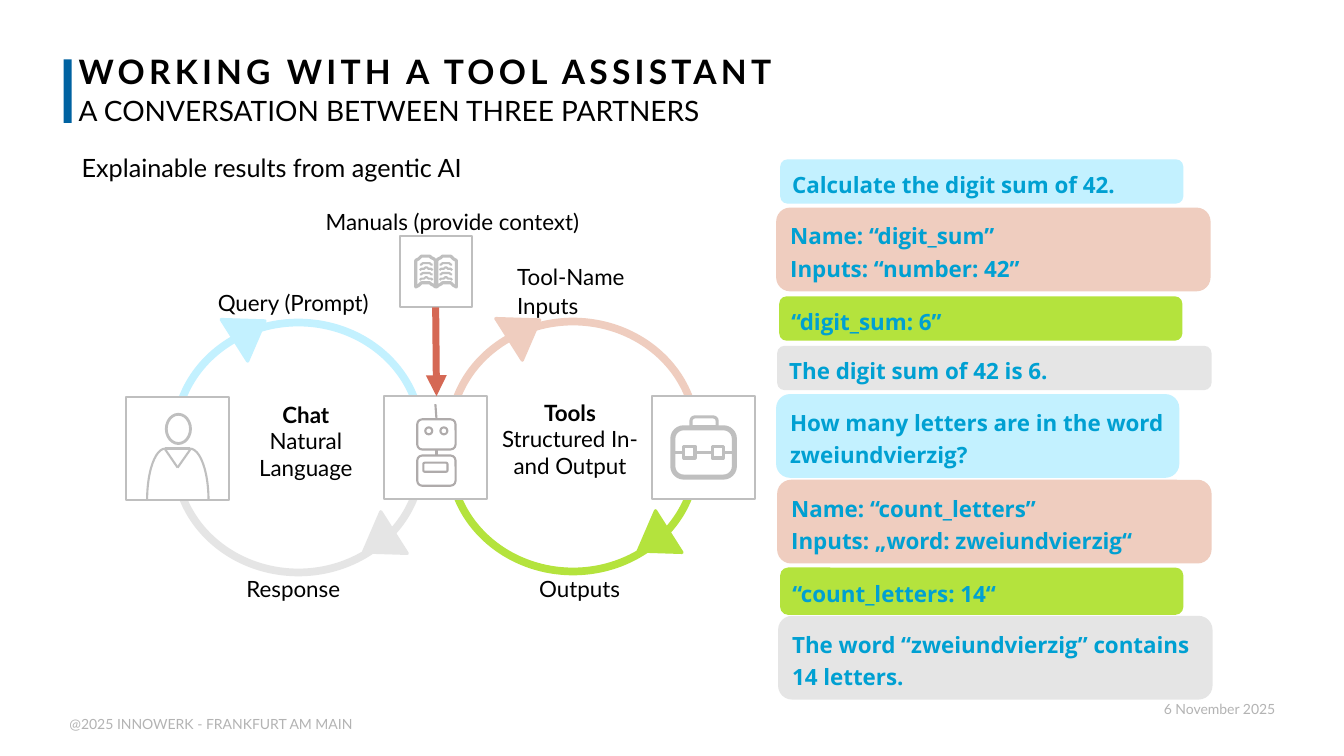
from dataclasses import dataclass
from math import pi, sin

from pptx import Presentation
from pptx.dml.color import RGBColor
from pptx.enum.shapes import MSO_CONNECTOR, MSO_SHAPE as Shape
from pptx.enum.text import MSO_ANCHOR as Anchor, MSO_AUTO_SIZE, PP_ALIGN as Align
from pptx.oxml.ns import qn
from pptx.util import Pt


@dataclass(frozen=True)
class Theme:
    font: str = "Lato"
    bubble_font: str = "Open Sans"
    title_size: int = 24
    subtitle_size: int = 20
    lead_size: int = 18
    text_size: int = 16
    footer_size: int = 10
    text: str = "000000"
    footer: str = "B3B3B3"
    accent: str = "0062A1"
    bubble_text: str = "00A0D2"
    query: str = "C3F1FF"
    call: str = "EFCDBF"
    output: str = "B4E33D"
    response: str = "E5E5E5"
    icon: str = "BFBFBF"
    robot: str = "AFABAB"
    arrow: str = "D56854"
    white: str = "FFFFFF"


theme = Theme()


def paint(shape, fill=None, line=None, width=1.5):
    """Set fill and outline; None leaves that part empty."""
    shape.shadow.inherit = False
    for part, colour in ((shape.fill, fill), (shape.line.fill, line)):
        if colour:
            part.solid()
            part.fore_color.rgb = RGBColor.from_string(colour)
        else:
            part.background()
    if line:
        shape.line.width = Pt(width)
    return shape


def write(shape, lines, margins=(0, 0), anchor=Anchor.TOP, align=Align.LEFT, spacing=1.0,
          wrap=True, **font_values):
    """Fill a shape with paragraphs; margins are (sides, top and bottom)."""
    frame = shape.text_frame
    side, edge = (Pt(margin) for margin in margins)
    frame_values = dict(margin_left=side, margin_right=side, margin_top=edge, margin_bottom=edge,
                        word_wrap=wrap, auto_size=MSO_AUTO_SIZE.NONE, vertical_anchor=anchor)
    for name, value in frame_values.items():
        setattr(frame, name, value)
    frame.text = "\n".join(lines)
    font_format = dict(name=theme.font, size=theme.text_size, bold=False) | font_values
    colour = font_format.pop("colour", theme.text)
    font_format["size"] = Pt(font_format["size"])
    paragraph_values = dict(alignment=align, line_spacing=spacing, space_before=Pt(0))
    for paragraph in frame.paragraphs:
        for name, value in paragraph_values.items():
            setattr(paragraph, name, value)
        font = paragraph.runs[0].font
        for name, value in font_format.items():
            setattr(font, name, value)
        font.color.rgb = RGBColor.from_string(colour)
    return frame


presentation = Presentation()
presentation.slide_width, presentation.slide_height = Pt(960), Pt(540)
slide = presentation.slides.add_slide(presentation.slide_layouts.get_by_name("Comparison"))
shapes = slide.shapes

# Headings
title, subtitle, unused_left, lead, unused_right = slide.placeholders
for placeholder in (unused_left, unused_right):
    placeholder.element.getparent().remove(placeholder.element)
headings = [
    (title, 56.2, 38.9, 26.6, "WORKING WITH A TOOL ASSISTANT",
     dict(size=theme.title_size, bold=True, spacing=0.9, anchor=Anchor.BOTTOM)),
    (subtitle, 56.2, 67, 24.5, "A CONVERSATION BETWEEN THREE PARTNERS",
     dict(size=theme.subtitle_size)),
    (lead, 58.3, 108.7, 21.6, "Explainable results from agentic AI", dict(size=theme.lead_size)),
]
for placeholder, left, top, height, text, values in headings:
    placeholder.left, placeholder.top = Pt(left), Pt(top)
    placeholder.width, placeholder.height = Pt(861), Pt(height)
    write(placeholder, [text], **values)
title.text_frame.paragraphs[0].runs[0].font._element.set("spc", "300")
paint(shapes.add_shape(Shape.RECTANGLE, Pt(45.4), Pt(42.5), Pt(5.8), Pt(45.4)), theme.accent)

# Conversation loops: an upper and a lower arc, each with an arrowhead
loops = [(125.3, 230.4, theme.query, theme.response), (321.5, 229.7, theme.call, theme.output)]
for left, top, upper, lower in loops:
    for arc_top, start, end, colour in ((top, 179, 0, upper), (top + 16.5, 357, 181, lower)):
        arc = shapes.add_shape(Shape.ARC, Pt(left), Pt(arc_top), Pt(175.7), Pt(162))
        arc.adjustments[0], arc.adjustments[1] = start * 0.6, end * 0.6
        paint(arc, line=colour, width=5.5)
    for dx, dy, rotation, colour in ((35.4, -7.2, 57.6, upper), (127.6, 144, 237.6, lower)):
        head = shapes.add_shape(Shape.ISOSCELES_TRIANGLE, Pt(left + dx), Pt(top + dy),
                                Pt(35.3), Pt(25.9))
        head.rotation = rotation
        paint(head, colour, colour, 2.25)

# Icon frames
for left, top, size in ((90, 283.7, 73.4), (274.3, 283, 73.4), (465.8, 283, 73.4),
                        (285.8, 168.5, 51.1)):
    paint(shapes.add_shape(Shape.RECTANGLE, Pt(left), Pt(top), Pt(size), Pt(size)),
          theme.white, theme.icon)

# Outlined icon parts: robot, person, toolbox
icon_parts = [
    (Shape.ROUNDED_RECTANGLE, 298, 299.5, 27.4, 21.6, theme.robot, 1.5, []),
    (Shape.ROUNDED_RECTANGLE, 298, 325.4, 27.4, 21.6, theme.robot, 1.5, []),
    (Shape.ROUNDED_RECTANGLE, 302.4, 330.5, 17.3, 6.5, theme.robot, 1.5, []),
    (Shape.OVAL, 303.8, 305.3, 5, 5, theme.robot, 1.5, []),
    (Shape.OVAL, 314.6, 305.3, 5, 5, theme.robot, 1.5, []),
    (Shape.OVAL, 118.8, 295.9, 17.3, 20.9, theme.icon, 2, []),
    (Shape.ARC, 122.4, 320.4, 26.6, 73.4, theme.icon, 1.5, [162, 0]),
    (Shape.ARC, 105.1, 320.4, 25.9, 73.4, theme.icon, 1.5, [108, 162]),
    (Shape.ROUNDED_RECTANGLE, 480.6, 305.6, 44, 35.2, theme.icon, 3.6, [0.22]),
    (Shape.ROUND_2_SAME_RECTANGLE, 493.6, 297.8, 18.7, 7, theme.icon, 2.2, [0.4, 0]),
    (Shape.RECTANGLE, 488.5, 318.6, 8, 8.6, theme.icon, 2.2, []),
    (Shape.RECTANGLE, 508.7, 318.6, 8, 8.6, theme.icon, 2.2, []),
]
for kind, left, top, width, height, colour, line_width, adjustments in icon_parts:
    part = shapes.add_shape(kind, Pt(left), Pt(top), Pt(width), Pt(height))
    for index, value in enumerate(adjustments):
        part.adjustments[index] = value
    paint(part, line=colour, width=line_width)

# Book: two mirrored pages, each with four wavy lines of writing
book_middle, steps = 311.5, 10
for side in (-1, 1):
    waves = []
    for inner, outer, base, rise in [(0.3, 14.4, 185.6, 3)] + [
            (2.5, 11.5, 189.2 + 3.55 * row, 1.5) for row in range(4)]:
        waves.append([(book_middle + side * (inner + (outer - inner) * step / steps),
                       base - rise * sin(pi * step / steps)) for step in range(steps + 1)])
    page, *writing = waves
    page = page + [(x, y + 19.2) for x, y in reversed(page)]
    for points, closed, width in [(page, True, 2.2)] + [(row, False, 1.5) for row in writing]:
        builder = shapes.build_freeform(*points[0], scale=Pt(1))
        builder.add_line_segments(points[1:], close=closed)
        paint(builder.convert_to_shape(), line=theme.icon, width=width)

# Straight strokes, ending with the arrow from the manuals to the robot
strokes = [
    (311.8, 321.1, 311.8, 325.4, theme.robot, 1.5),
    (311.8, 299.5, 311, 288.7, theme.robot, 1.5),
    (118, 321, 126.9, 334, theme.icon, 1.5),
    (136, 321, 126.9, 334, theme.icon, 1.5),
    (118, 320.4, 136, 320.4, theme.icon, 1.5),
    (482, 322.9, 488.5, 322.9, theme.icon, 2.2),
    (496.5, 322.9, 508.7, 322.9, theme.icon, 2.2),
    (516.7, 322.9, 523, 322.9, theme.icon, 2.2),
    (311.2, 219.6, 311.8, 283, theme.arrow, 5),
]
for x1, y1, x2, y2, colour, width in strokes:
    stroke = shapes.add_connector(MSO_CONNECTOR.STRAIGHT, Pt(x1), Pt(y1), Pt(x2), Pt(y2))
    stroke.line.color.rgb = RGBColor.from_string(colour)
    stroke.line.width = Pt(width)
    properties = stroke._element.spPr
    properties.append(properties.makeelement(qn("a:effectLst"), {}))
line_element = stroke.line._get_or_add_ln()
line_element.append(line_element.makeelement(qn("a:tailEnd"), {"type": "triangle"}))

# Labels and footer
centred = dict(align=Align.CENTER, spacing=1.1)
topic = dict(align=Align.CENTER, anchor=Anchor.MIDDLE, margins=(7.2, 3.6))
small = dict(size=theme.footer_size, colour=theme.footer)
labels = [
    (232.6, 146.9, 185, 21.6, ["Manuals (provide context)"], dict(spacing=1.1, wrap=False)),
    (369.4, 185.8, 172.8, 42.5, ["Tool-Name", "Inputs"], dict(spacing=1.1)),
    (136.1, 204.5, 146.9, 21.6, ["Query (Prompt)"], centred),
    (136.1, 409, 146.9, 19.4, ["Response"], centred),
    (340.6, 409, 146.9, 19.4, ["Outputs"], centred),
    (162.7, 282.2, 111.6, 65.5, ["Chat", "Natural Language"], topic),
    (349.2, 280.8, 115.9, 65.5, ["Tools", "Structured In- and Output"], topic),
    (42.5, 511.2, 491, 13, ["@2025 INNOWERK - FRANKFURT AM MAIN"], dict(margins=(7.2, 0)) | small),
    (695.5, 496.8, 222.5, 13, ["6 November 2025"],
     dict(margins=(7.2, 3.6), align=Align.RIGHT) | small),
]
for left, top, width, height, lines, values in labels:
    label = shapes.add_textbox(Pt(left), Pt(top), Pt(width), Pt(height))
    frame = write(label, lines, **values)
    if values is topic:
        frame.paragraphs[0].runs[0].font.bold = True

# Conversation bubbles
bubbles = [
    (557.3, 113.8, 288, 31.7, theme.query, ["Calculate the digit sum of 42."]),
    (554.4, 148.3, 310.3, 59.8, theme.call, ["Name: “digit_sum”", "Inputs: “number: 42”"]),
    (556.6, 211.7, 288, 31.7, theme.output, ["“digit_sum: 6”"]),
    (555.1, 247, 310.3, 31.7, theme.response, ["The digit sum of 42 is 6."]),
    (554.4, 281.5, 288, 59.8, theme.query, ["How many letters are in the word zweiundvierzig?"]),
    (555.1, 342.7, 310.3, 59.8, theme.call,
     ["Name: “count_letters”", "Inputs: „word: zweiundvierzig“"]),
    (557.3, 405.4, 288, 33.8, theme.output, ["“count_letters: 14“"]),
    (555.8, 439.9, 310.3, 59.8, theme.response,
     ["The word “zweiundvierzig” contains 14 letters."]),
]
for left, top, width, height, colour, lines in bubbles:
    bubble = shapes.add_shape(Shape.ROUNDED_RECTANGLE, Pt(left), Pt(top), Pt(width), Pt(height))
    write(paint(bubble, colour), lines, (7.2, 3.6), Anchor.MIDDLE, spacing=1.2,
          name=theme.bubble_font, bold=True, colour=theme.bubble_text)

presentation.save("out.pptx")
